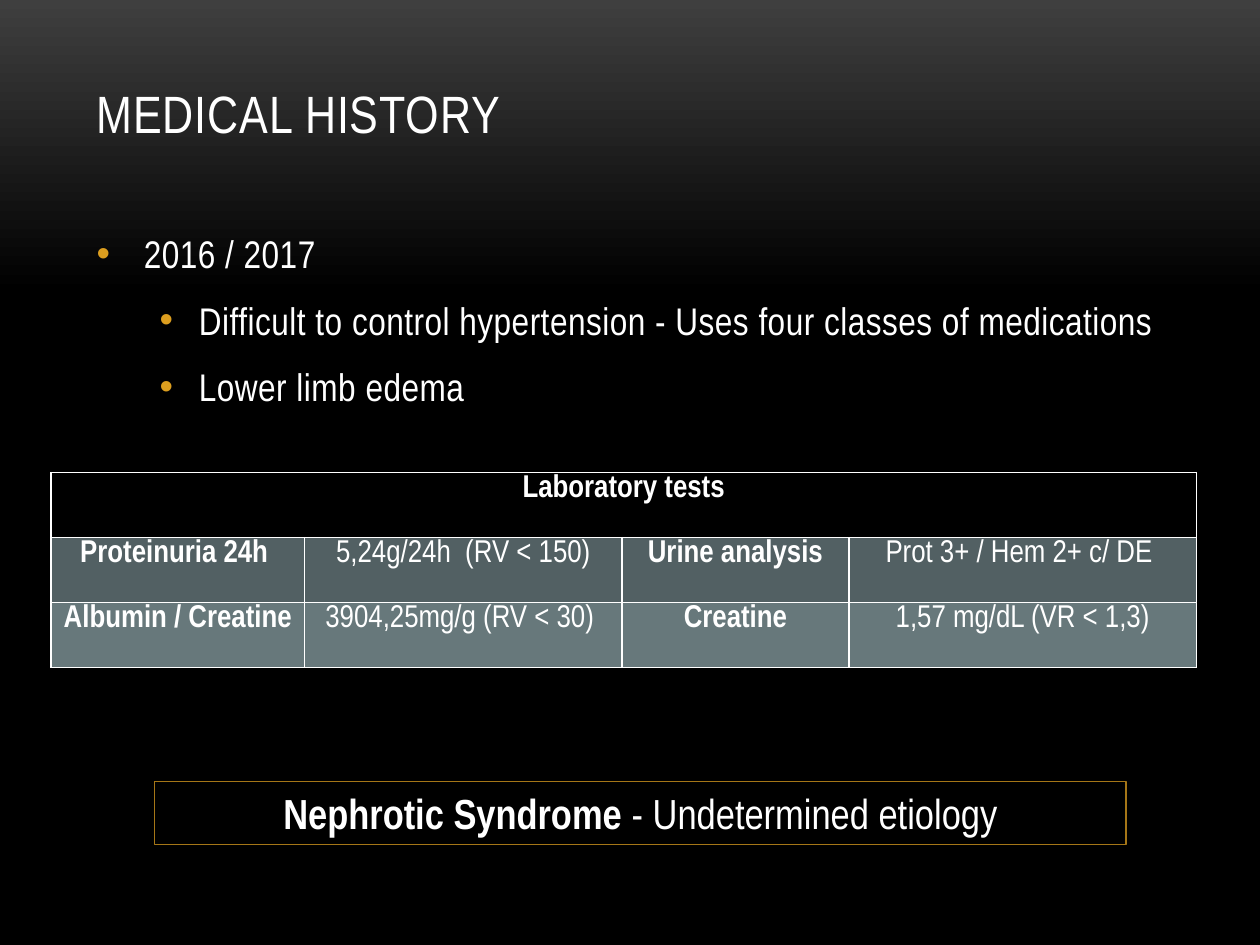
from lxml import etree
from pptx import Presentation
from pptx.dml.color import RGBColor
from pptx.enum.shapes import MSO_SHAPE
from pptx.enum.text import MSO_ANCHOR, PP_ALIGN
from pptx.oxml.ns import qn
from pptx.util import Cm, Pt

CENTER, LEFT = PP_ALIGN.CENTER, PP_ALIGN.LEFT
TOP, MIDDLE, BOTTOM = MSO_ANCHOR.TOP, MSO_ANCHOR.MIDDLE, MSO_ANCHOR.BOTTOM
RECTANGLE = MSO_SHAPE.RECTANGLE

FONT = "Arial Narrow"
WHITE, BLACK, CHARCOAL = "FFFFFF", "000000", "3F3F3F"
BULLET_GOLD, FRAME_GOLD = "DC9E1F", "A57617"
ROW_FILLS = ("526063", "67787B")

HISTORY = [
    (0, "2016 / 2017"),
    (1, "Difficult to control hypertension - Uses four classes of medications"),
    (1, "Lower limb edema"),
]
BULLET_INDENTS = [(0.95, -0.95), (2.06, -0.79)]  # left margin and hanging, in cm

LAB_TITLE = "Laboratory tests"
LAB_RESULTS = [
    ("Proteinuria 24h ", "5,24g/24h  (RV < 150)", "Urine analysis", "Prot 3+ / Hem 2+ c/ DE "),
    ("Albumin / Creatine", "3904,25mg/g (RV < 30) ", "Creatine", "1,57 mg/dL (VR < 1,3)"),
]
LAB_COLUMNS = (5.11, 6.4, 4.57, 7.01)
LAB_ROW_HEIGHT = 1.31


def rgb(value):
    return RGBColor.from_string(value)


def add_text(paragraph, text, size=18, color=WHITE, bold=False, align=LEFT, spacing=0):
    """Append a run; spacing is the letter spacing in points."""
    paragraph.alignment = align
    run = paragraph.add_run()
    run.text = text
    run.font.name = FONT
    run.font.size = Pt(size)
    run.font.bold = bold
    run.font.color.rgb = rgb(color)
    if spacing:
        run._r.get_or_add_rPr().set("spc", str(round(spacing * 100)))


def add_bullet(paragraph, level):
    margin, hanging = BULLET_INDENTS[level]
    properties = paragraph._p.get_or_add_pPr()
    properties.set("marL", str(Cm(margin)))
    properties.set("indent", str(Cm(hanging)))
    color = etree.SubElement(properties, qn("a:buClr"))
    etree.SubElement(color, qn("a:srgbClr"), val=BULLET_GOLD)
    etree.SubElement(properties, qn("a:buFont"), typeface="Arial")
    etree.SubElement(properties, qn("a:buChar"), char="•")


def add_text_frame(slide, left, top, width, height, anchor=TOP):
    box = slide.shapes.add_textbox(Cm(left), Cm(top), Cm(width), Cm(height))
    frame = box.text_frame
    frame.word_wrap = True
    frame.vertical_anchor = anchor
    return frame


def set_background(slide):
    fill = slide.background.fill
    fill.gradient()
    fill.gradient_angle = 270
    for stop, color, position in zip(fill.gradient_stops, (CHARCOAL, BLACK), (0, 0.31)):
        stop.color.rgb = rgb(color)
        stop.position = position


def add_history(slide):
    frame = add_text_frame(slide, 1.7, 4.52, 22.02, 10.08)
    for index, (level, text) in enumerate(HISTORY):
        paragraph = frame.paragraphs[0] if index == 0 else frame.add_paragraph()
        paragraph.level = level
        paragraph.space_after = Pt(6)
        if index:
            paragraph.space_before = Pt(5.4)
        add_bullet(paragraph, level)
        add_text(paragraph, text, size=22, spacing=0.3)


def format_cell(cell, fill):
    properties = cell._tc.get_or_add_tcPr()
    for side in ("a:lnL", "a:lnR", "a:lnT", "a:lnB"):
        border = etree.SubElement(properties, qn(side), w=str(Pt(1)))
        solid = etree.SubElement(border, qn("a:solidFill"))
        etree.SubElement(solid, qn("a:srgbClr"), val=WHITE)
    cell.fill.solid()
    cell.fill.fore_color.rgb = rgb(fill)


def write_cell(cell, text, bold):
    paragraph = cell.text_frame.paragraphs[0]
    paragraph.line_spacing = 0.8
    add_text(paragraph, text, bold=bold, align=CENTER)


def add_lab_table(slide):
    row_count = len(LAB_RESULTS) + 1
    table = slide.shapes.add_table(
        row_count, len(LAB_COLUMNS), Cm(1.03), Cm(9.53),
        Cm(sum(LAB_COLUMNS)), Cm(LAB_ROW_HEIGHT * row_count)).table
    for column, width in zip(table.columns, LAB_COLUMNS):
        column.width = Cm(width)
    for row, fill in zip(table.rows, (BLACK, *ROW_FILLS)):
        row.height = Cm(LAB_ROW_HEIGHT)
        for cell in row.cells:
            format_cell(cell, fill)
    table.cell(0, 0).merge(table.cell(0, len(LAB_COLUMNS) - 1))
    write_cell(table.cell(0, 0), LAB_TITLE, bold=True)
    for row, results in enumerate(LAB_RESULTS, start=1):
        for column, text in enumerate(results):
            write_cell(table.cell(row, column), text, bold=column % 2 == 0)


def add_diagnosis(slide):
    frame_box = slide.shapes.add_shape(RECTANGLE, Cm(3.12), Cm(15.75), Cm(19.58), Cm(1.28))
    frame_box.shadow.inherit = False
    frame_box.fill.solid()
    frame_box.fill.fore_color.rgb = rgb(BLACK)
    frame_box.line.color.rgb = rgb(FRAME_GOLD)
    frame_box.line.width = Pt(0.75)
    frame_box.text_frame.word_wrap = True
    frame_box.text_frame.vertical_anchor = MIDDLE
    paragraph = frame_box.text_frame.paragraphs[0]
    add_text(paragraph, "Nephrotic Syndrome ", size=24, bold=True, align=CENTER)
    add_text(paragraph, "- Undetermined etiology", size=24, align=CENTER)


def main():
    presentation = Presentation()
    presentation.slide_width, presentation.slide_height = Cm(25.4), Cm(19.05)
    slide = presentation.slides.add_slide(presentation.slide_layouts[6])
    set_background(slide)
    title = add_text_frame(slide, 1.7, 0.94, 22.02, 2.08, anchor=BOTTOM)
    add_text(title.paragraphs[0], "MEDICAL HISTORY", size=30, spacing=0.5)
    add_history(slide)
    add_lab_table(slide)
    add_diagnosis(slide)
    presentation.save("out.pptx")


if __name__ == "__main__":
    main()
